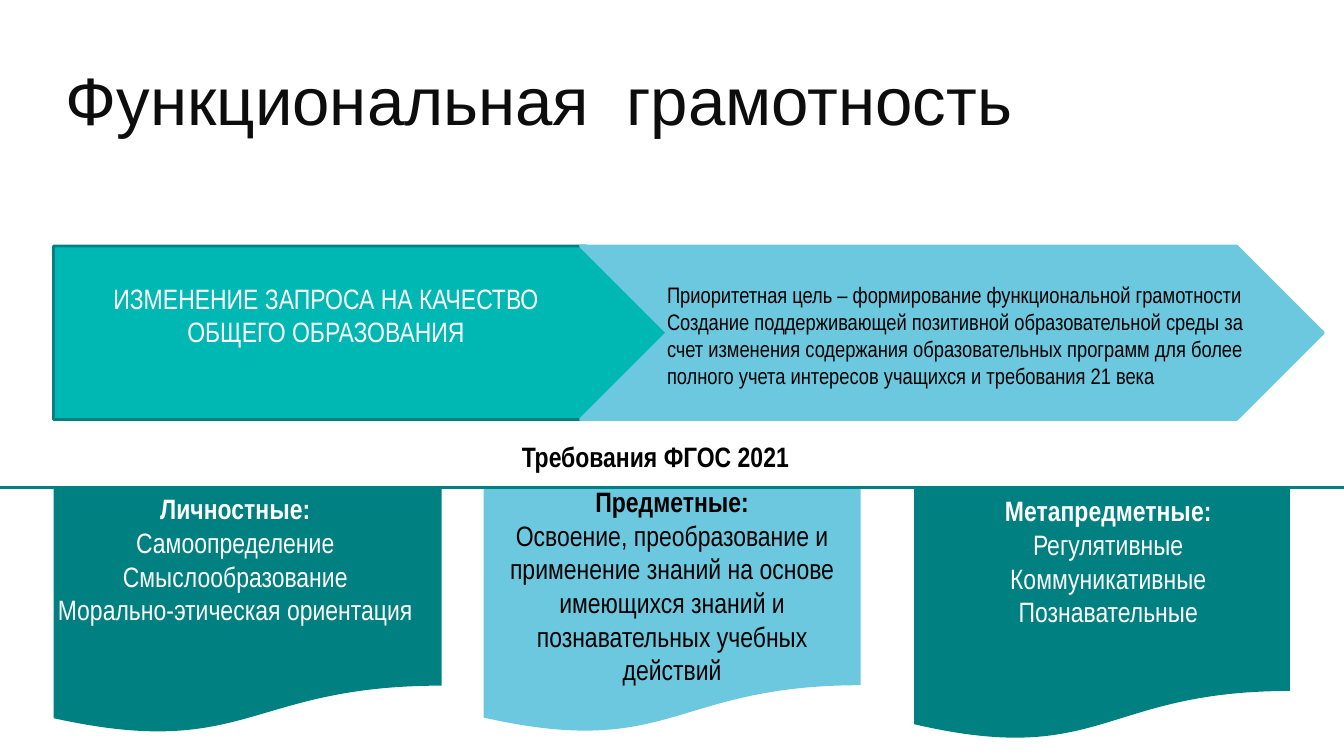
import pptx
import pptx.dml.color
import pptx.enum.shapes
import pptx.enum.text
import pptx.oxml.ns
import pptx.util
from lxml import etree

Cm = pptx.util.Cm
Pt = pptx.util.Pt
SHAPES = pptx.enum.shapes.MSO_SHAPE
ALIGN = pptx.enum.text.PP_ALIGN

WIDTH, HEIGHT = 33.87, 19.05
TEAL, TURQUOISE, SKY = "008080", "00B8B3", "6CC8DE"
BLACK, WHITE = "000000", "FFFFFF"


def color(value):
    return pptx.dml.color.RGBColor.from_string(value)


def write(paragraph, text, size=20, font="Arial Narrow", fill=BLACK, bold=False, align=ALIGN.LEFT):
    paragraph.alignment = align
    run = paragraph.add_run()
    run.text = text
    run.font.size = Pt(size)
    run.font.name = font
    run.font.bold = bold
    run.font.color.rgb = color(fill)


class Deck:
    def __init__(self):
        self.presentation = pptx.Presentation()
        self.presentation.slide_width = Cm(WIDTH)
        self.presentation.slide_height = Cm(HEIGHT)
        self.slide = self.presentation.slides.add_slide(self.presentation.slide_layouts[5])

    def title(self, text, box):
        heading = self.slide.shapes.title
        heading.left, heading.top, heading.width, heading.height = map(Cm, box)
        frame = heading.text_frame
        frame.auto_size = pptx.enum.text.MSO_AUTO_SIZE.NONE
        frame.vertical_anchor = pptx.enum.text.MSO_ANCHOR.MIDDLE
        write(frame.paragraphs[0], text, size=48, font="Arial", fill="0D0D0D")

    def block(self, kind, box, fill, outline=None):
        block = self.slide.shapes.add_shape(kind, *map(Cm, box))
        block.shadow.inherit = False
        block.fill.solid()
        block.fill.fore_color.rgb = color(fill)
        if outline:
            block.line.color.rgb = color(outline)
            block.line.width = Pt(2)
        else:
            block.line.fill.background()

    def rule(self, y):
        rule = self.slide.shapes.add_connector(
            pptx.enum.shapes.MSO_CONNECTOR.STRAIGHT, 0, Cm(y), Cm(WIDTH), Cm(y))
        rule.line.color.rgb = color(TEAL)
        rule.line.width = Pt(1.75)
        etree.SubElement(rule._element.spPr, pptx.oxml.ns.qn("a:effectLst"))

    def text(self, lines, box, wrap=True, bold_first=False, **style):
        frame = self.slide.shapes.add_textbox(*map(Cm, box)).text_frame
        frame.word_wrap = wrap
        for index, line in enumerate(lines):
            paragraph = frame.add_paragraph() if index else frame.paragraphs[0]
            write(paragraph, line, bold=bold_first and index == 0, **style)


def main():
    deck = Deck()
    deck.title("Функциональная  грамотность", (1.4, 1.32, 29.41, 2.31))

    requirements = [
        ((1.35, 12.29, 9.78, 6.22), TEAL, (1.04, 12.27, 9.78, 3.68), WHITE,
         ["Личностные:", "Самоопределение", "Смыслообразование",
          "Морально-этическая ориентация"]),
        ((12.19, 12.32, 9.5, 6.17), SKY, (12.19, 12.09, 9.5, 5.38), BLACK,
         ["Предметные:",
          "Освоение, преобразование и применение знаний на основе "
          "имеющихся знаний и познавательных учебных действий"]),
        ((23.04, 12.32, 9.47, 6.35), TEAL, (23.04, 12.32, 9.78, 3.68), WHITE,
         ["Метапредметные:", "Регулятивные", "Коммуникативные", "Познавательные"]),
    ]
    for panel, fill, *_ in requirements:
        deck.block(SHAPES.FLOWCHART_DOCUMENT, panel, fill)
    deck.rule(12.29)
    for _, _, caption, ink, lines in requirements:
        deck.text(lines, caption, bold_first=True, fill=ink, align=ALIGN.CENTER)
    deck.text(["Требования ФГОС 2021"], (12.9, 10.95, 7.34, 1.12), wrap=False, bold_first=True)

    deck.block(SHAPES.PENTAGON, (1.35, 6.2, 15.6, 4.37), TURQUOISE, TEAL)
    deck.block(SHAPES.CHEVRON, (14.63, 6.2, 18.72, 4.37), SKY, SKY)
    deck.text(["ИЗМЕНЕНИЕ ЗАПРОСА НА КАЧЕСТВО ОБЩЕГО ОБРАЗОВАНИЯ"],
              (2.31, 6.96, 11.81, 1.96), fill=WHITE, align=ALIGN.CENTER)
    deck.text(["Приоритетная цель – формирование функциональной грамотности",
               "Создание поддерживающей позитивной образовательной среды за счет "
               "изменения содержания образовательных программ для более полного "
               "учета интересов учащихся и требования 21 века"],
              (16.56, 6.96, 15.67, 3.84), size=16)
    deck.presentation.save("out.pptx")


if __name__ == "__main__":
    main()
